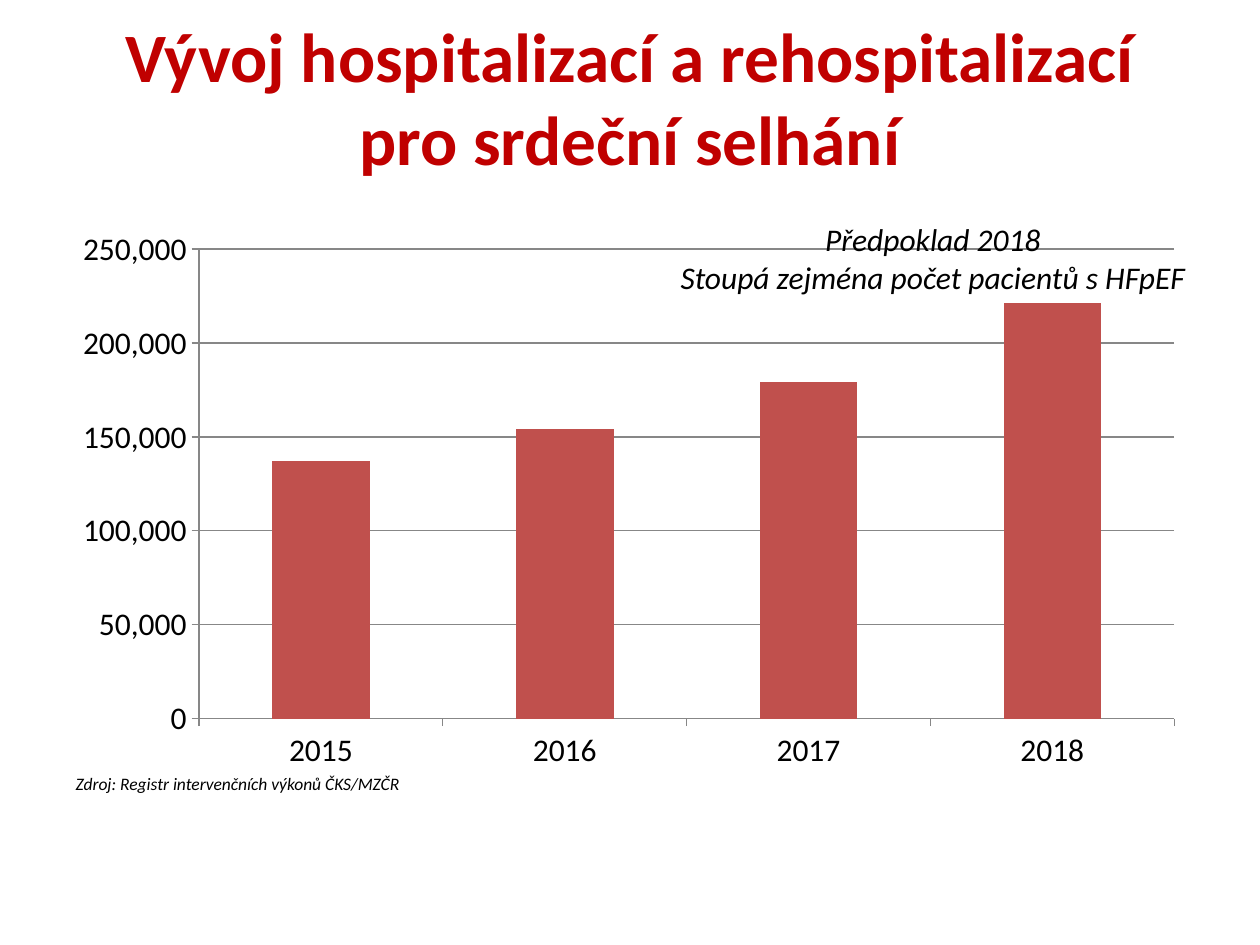
from dataclasses import dataclass

from lxml.etree import SubElement
from pptx import Presentation
from pptx.chart.data import CategoryChartData
from pptx.dml.color import RGBColor
from pptx.enum.chart import XL_CHART_TYPE as ChartType, XL_TICK_MARK as TickMark
from pptx.enum.text import MSO_ANCHOR as Anchor, MSO_AUTO_SIZE as AutoSize, PP_ALIGN as Align
from pptx.oxml import parse_xml
from pptx.oxml.ns import nsdecls, qn
from pptx.util import Pt

PX = 914400 // 126


@dataclass(frozen=True)
class Theme:
    font: str = "Calibri"
    heading: RGBColor = RGBColor(0xC0, 0x00, 0x00)
    ink: RGBColor = RGBColor(0x00, 0x00, 0x00)
    bar: RGBColor = RGBColor(0xC0, 0x50, 0x4D)
    rule: RGBColor = RGBColor(0x87, 0x87, 0x87)
    heading_size: float = 39.6
    text_size: float = 18
    source_size: float = 10


THEME = Theme()


def emu(box):
    return [length * PX for length in box]


def place(part, box):
    part.left, part.top, part.width, part.height = emu(box)


def style(font, size, color, bold=False, italic=False):
    font.name = THEME.font
    font.size = Pt(size)
    font.color.rgb = color
    font.bold = bold
    font.italic = italic


def add_heading(slide, box, wording):
    heading = slide.shapes.title
    place(heading, box)
    frame = heading.text_frame
    frame.text = wording
    frame.auto_size = AutoSize.NONE
    frame.vertical_anchor = Anchor.MIDDLE
    line = frame.paragraphs[0]
    line.alignment = Align.CENTER
    style(line.font, THEME.heading_size, THEME.heading, bold=True)


def add_source(slide, box, wording):
    source = slide.placeholders[1]
    place(source, box)
    frame = source.text_frame
    frame.text = wording
    frame.auto_size = AutoSize.NONE
    frame.vertical_anchor = Anchor.BOTTOM
    line = frame.paragraphs[0]
    line.space_before = Pt(0)
    properties = line._p.get_or_add_pPr()
    properties.set("marL", "0")
    properties.set("indent", "0")
    SubElement(properties, qn("a:buNone"))
    style(line.font, THEME.source_size, THEME.ink, italic=True)


def set_plot_area(chart, x, y, w, h):
    area = chart._chartSpace.find(".//" + qn("c:plotArea"))
    for layout in area.findall(qn("c:layout")):
        area.remove(layout)
    area.insert(0, parse_xml(
        f'<c:layout {nsdecls("c")}><c:manualLayout><c:layoutTarget val="inner"/>'
        '<c:xMode val="edge"/><c:yMode val="edge"/>'
        f'<c:x val="{x}"/><c:y val="{y}"/><c:w val="{w}"/><c:h val="{h}"/>'
        '</c:manualLayout></c:layout>'))


def add_admissions(slide, box, admissions):
    data = CategoryChartData(number_format="#,##0")
    data.categories = list(admissions)
    data.add_series("Series 1", list(admissions.values()))
    chart = slide.shapes.add_chart(ChartType.COLUMN_CLUSTERED, *emu(box), data).chart
    chart.has_legend = False
    chart.has_title = False
    style(chart.font, THEME.text_size, THEME.ink)
    set_plot_area(chart, 0.12, 0.05, 0.86, 0.81)

    columns = chart.plots[0]
    columns.gap_width = 150
    columns.vary_by_categories = False
    fill = columns.series[0].format.fill
    fill.solid()
    fill.fore_color.rgb = THEME.bar

    years, counts = chart.category_axis, chart.value_axis
    for axis in (years, counts):
        axis.major_tick_mark = TickMark.OUTSIDE
        axis.minor_tick_mark = TickMark.NONE
        axis.format.line.color.rgb = THEME.rule
    counts.minimum_scale = 0
    counts.maximum_scale = 250000
    counts.major_unit = 50000
    counts.tick_labels.number_format = "#,##0"
    counts.tick_labels.number_format_is_linked = False
    counts.has_major_gridlines = True
    counts.major_gridlines.format.line.color.rgb = THEME.rule


def add_forecast(slide, box, lines):
    frame = slide.shapes.add_textbox(*emu(box)).text_frame
    frame.word_wrap = True
    frame.auto_size = AutoSize.SHAPE_TO_FIT_TEXT
    frame.text = "\n".join(lines)
    for line in frame.paragraphs:
        line.alignment = Align.CENTER
        style(line.font, THEME.text_size, THEME.ink, italic=True)


def main():
    deck = Presentation()
    deck.slide_width, deck.slide_height = emu((1260, 945))
    slide = deck.slides.add_slide(deck.slide_layouts[1])
    add_heading(slide, (63, 38, 1134, 117),
                "Vývoj hospitalizací a rehospitalizací pro srdeční selhání")
    add_admissions(slide, (63, 220, 1134, 580),
                   {"2015": 137000, "2016": 154000, "2017": 179000, "2018": 221000})
    add_source(slide, (63, 731, 1134, 69), "Zdroj: Registr intervenčních výkonů ČKS/MZČR")
    add_forecast(slide, (660, 214, 546, 89),
                 ("Předpoklad 2018", "Stoupá zejména počet pacientů s HFpEF"))
    deck.save("out.pptx")


if __name__ == "__main__":
    main()
